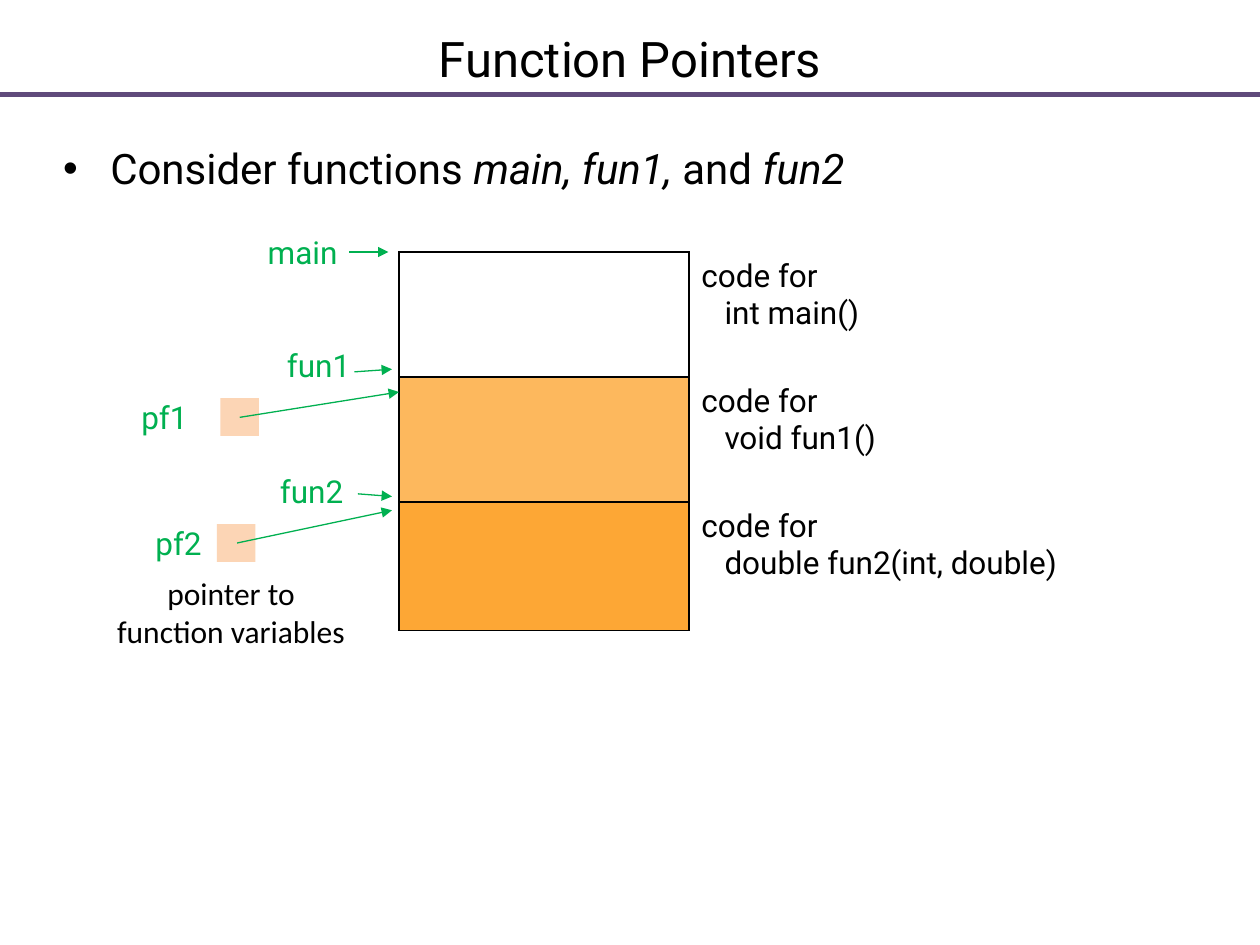
from lxml.etree import SubElement
from pptx import Presentation
from pptx.dml.color import RGBColor
from pptx.enum.shapes import MSO_CONNECTOR, MSO_SHAPE
from pptx.enum.text import MSO_ANCHOR, PP_ALIGN
from pptx.oxml.ns import qn
from pptx.util import Pt

COLORS = {
    "text": "000000",
    "label": "00B050",
    "rule": "604A7B",
    "pointer": "FCD5B5",
    "fun1": "FDB85D",
    "fun2": "FDA735",
}
FONT = "Roboto"


def add_run(paragraph, text, size, color="text", font=FONT, italic=False):
    run = paragraph.add_run()
    run.text = text
    run.font.size = Pt(size)
    run.font.name = font
    run.font.italic = italic
    run.font.color.rgb = RGBColor.from_string(COLORS[color])


def add_text_frame(slide, left, top, width, height):
    shape = slide.shapes.add_textbox(Pt(left), Pt(top), Pt(width), Pt(height))
    frame = shape.text_frame
    frame.word_wrap = True
    frame.margin_left = frame.margin_right = 0
    frame.margin_top = frame.margin_bottom = 0
    return frame


def add_line(slide, start, end, color, width, arrow=False):
    points = [Pt(value) for value in (*start, *end)]
    connector = slide.shapes.add_connector(MSO_CONNECTOR.STRAIGHT, *points)
    connector.line.color.rgb = RGBColor.from_string(COLORS[color])
    connector.line.width = Pt(width)
    if arrow:
        SubElement(connector.line._get_or_add_ln(), qn("a:tailEnd"), type="triangle")
    SubElement(connector._element.spPr, qn("a:effectLst"))


def add_header(slide, left, top, width, height):
    frame = add_text_frame(slide, left, top, width, height)
    frame.vertical_anchor = MSO_ANCHOR.MIDDLE
    paragraph = frame.paragraphs[0]
    paragraph.alignment = PP_ALIGN.CENTER
    add_run(paragraph, "Function Pointers", 28)
    bottom = top + height
    add_line(slide, (0, bottom), (left * 2 + width, bottom), "rule", 2.5)


def add_bullet(slide, left, top, width, height):
    paragraph = add_text_frame(slide, left, top, width, height).paragraphs[0]
    properties = paragraph._p.get_or_add_pPr()
    properties.set("marL", str(Pt(27)))
    properties.set("indent", str(Pt(-27)))
    SubElement(properties, qn("a:buFont"), typeface="Arial")
    SubElement(properties, qn("a:buChar"), char="•")
    for text, italic in (
        ("Consider functions ", False),
        ("main, fun1, ", True),
        ("and ", False),
        ("fun2", True),
    ):
        add_run(paragraph, text, 24, italic=italic)


def set_borders(cell, visible):
    properties = cell._tc.get_or_add_tcPr()
    for index, (side, shown) in enumerate(zip("LRTB", visible)):
        line = properties.makeelement(qn(f"a:ln{side}"), {"w": str(Pt(1))})
        properties.insert(index, line)
        if shown:
            fill = SubElement(line, qn("a:solidFill"))
            SubElement(fill, qn("a:srgbClr"), val=COLORS["text"])
        else:
            SubElement(line, qn("a:noFill"))


def add_memory_table(slide, left, top, width, height):
    rows = (
        ("int main()", None, 71.5),
        ("void fun1()", "fun1", 71.5),
        ("double fun2(int, double)", "fun2", height - 143),
    )
    shape = slide.shapes.add_table(len(rows), 2, Pt(left), Pt(top), Pt(width), Pt(height))
    table = shape.table
    table.first_row = table.horz_banding = False
    table.columns[0].width = Pt(165.6)
    table.columns[1].width = Pt(width - 165.6)
    for index, (signature, color, row_height) in enumerate(rows):
        table.rows[index].height = Pt(row_height)
        block, description = table.cell(index, 0), table.cell(index, 1)
        if color:
            block.fill.solid()
            block.fill.fore_color.rgb = RGBColor.from_string(COLORS[color])
        else:
            block.fill.background()
        description.fill.background()
        set_borders(block, (True, True, True, True))
        set_borders(description, (True, False, False, False))
        frame = description.text_frame
        add_run(frame.paragraphs[0], "code for", 18)
        paragraph = frame.add_paragraph()
        paragraph._p.get_or_add_pPr().set("marL", str(Pt(13.2)))
        add_run(paragraph, signature, 18)


def add_pointers(slide, left, top, width, height):
    labels = (
        ("main", 95, 3, 42, PP_ALIGN.LEFT),
        ("fun1", 106, 68, 42, PP_ALIGN.LEFT),
        ("fun2", 102, 140, 42, PP_ALIGN.LEFT),
        ("pf1", 14, 97.5, 44, PP_ALIGN.CENTER),
        ("pf2", 20, 169.5, 48, PP_ALIGN.CENTER),
    )
    for text, x, y, label_width, alignment in labels:
        frame = add_text_frame(slide, left + x, top + y, label_width, 21.6)
        frame.paragraphs[0].alignment = alignment
        add_run(frame.paragraphs[0], text, 18, "label")

    for x, y in ((68, 97.5), (66, 169.5)):
        square = slide.shapes.add_shape(
            MSO_SHAPE.RECTANGLE, Pt(left + x), Pt(top + y), Pt(22), Pt(21.6)
        )
        square.shadow.inherit = False
        square.fill.solid()
        square.fill.fore_color.rgb = RGBColor.from_string(COLORS["pointer"])
        square.line.fill.background()

    for x1, y1, x2, y2 in (
        (141.5, 14, 164, 14),
        (144.5, 82.5, 166, 81),
        (146.5, 152.2, 166, 153.7),
        (79, 108.5, 170, 94),
        (77.5, 180.3, 166, 161.6),
    ):
        add_line(slide, (left + x1, top + y1), (left + x2, top + y2), "label", 0.75, True)

    frame = add_text_frame(slide, left, top + height - 44, width, 44)
    for index, text in enumerate(("pointer to", "function variables")):
        paragraph = frame.add_paragraph() if index else frame.paragraphs[0]
        paragraph.alignment = PP_ALIGN.CENTER
        add_run(paragraph, text, 18, font="Calibri")


def main():
    presentation = Presentation()
    presentation.slide_width = Pt(720)
    presentation.slide_height = Pt(540)
    slide = presentation.slides.add_slide(presentation.slide_layouts[6])
    add_header(slide, 36, 12, 648, 42)
    add_bullet(slide, 36, 81.4, 660, 36)
    add_memory_table(slide, 228, 144, 396, 216.2)
    add_pointers(slide, 58, 130, 148, 242.3)
    presentation.save("out.pptx")


if __name__ == "__main__":
    main()
